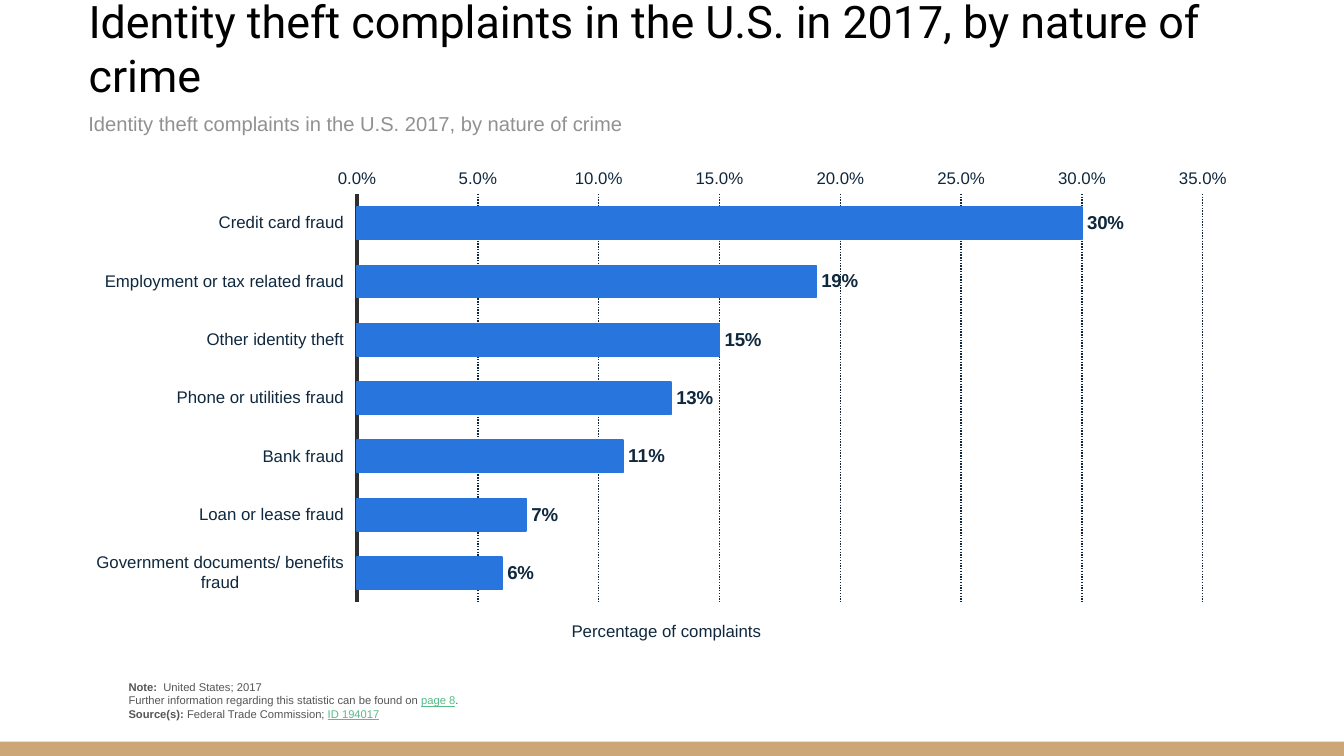
from dataclasses import dataclass

from lxml import etree
from pptx import Presentation
from pptx import util as u
from pptx.chart.data import CategoryChartData
from pptx.dml.color import RGBColor
from pptx.enum import chart as ch, dml, shapes, text


@dataclass(frozen=True)
class Theme:
    head_font: str = "Roboto"
    body_font: str = "Arial"
    black: str = "000000"
    grey: str = "919191"
    note: str = "555555"
    link: str = "57BB8A"
    navy: str = "0F283E"
    axis: str = "2F2F2F"
    bar: str = "2875DD"
    band: str = "CCA677"
    title_pt: float = 24
    subtitle_pt: float = 10.8
    label_pt: float = 10
    axis_pt: float = 9
    note_pt: float = 6


def set_font(font, color, **values):
    for name, value in values.items():
        setattr(font, name, value)
    font.color.rgb = RGBColor.from_string(color)


def set_layout(parent, before, **fractions):
    """Place a chart part by fractions of the chart area."""
    for old in parent.findall("{*}layout"):
        parent.remove(old)
    ns = etree.QName(parent).namespace
    layout = etree.Element(f"{{{ns}}}layout")
    manual = etree.SubElement(layout, f"{{{ns}}}manualLayout")
    for tag, value in fractions.items():
        etree.SubElement(manual, f"{{{ns}}}{tag}").set("val", str(value))
    anchor = next(el for el in parent if etree.QName(el).localname in before)
    anchor.addprevious(layout)


class Deck:
    def __init__(self, theme, width, height):
        self.t = theme
        self.prs = Presentation()
        self.prs.slide_width, self.prs.slide_height = u.Cm(width), u.Cm(height)
        self.s = self.prs.slides.add_slide(self.prs.slide_layouts[5])

    def band(self, box):
        sp = self.s.shapes.add_shape(shapes.MSO_SHAPE.RECTANGLE, *map(u.Cm, box))
        sp.shadow.inherit = False
        sp.fill.solid()
        sp.fill.fore_color.rgb = RGBColor.from_string(self.t.band)
        sp.line.fill.background()

    def fill_text(self, sp, paragraphs, anchor, spacing=1.0, **font):
        """Each paragraph is a list of (text, format changes) pairs."""
        tf = sp.text_frame
        frame = {"word_wrap": True, "auto_size": text.MSO_AUTO_SIZE.NONE,
                 "vertical_anchor": anchor}
        for name, value in frame.items():
            setattr(tf, name, value)
        for i, runs in enumerate(paragraphs):
            p = tf.add_paragraph() if i else tf.paragraphs[0]
            p.alignment, p.line_spacing = text.PP_ALIGN.LEFT, spacing
            for words, changes in runs:
                r = p.add_run()
                r.text = words
                set_font(r.font, **{**font, **changes})

    def title(self, box, words):
        sp = self.s.shapes.title
        sp.left, sp.top, sp.width, sp.height = map(u.Cm, box)
        self.fill_text(sp, [[(words, {})]], text.MSO_ANCHOR.BOTTOM,
                       name=self.t.head_font, size=u.Pt(self.t.title_pt),
                       color=self.t.black)

    def text(self, box, paragraphs, size, color, anchor=text.MSO_ANCHOR.TOP,
             spacing=1.0):
        sp = self.s.shapes.add_textbox(*map(u.Cm, box))
        self.fill_text(sp, paragraphs, anchor, spacing, name=self.t.body_font,
                       size=u.Pt(size), color=color)

    def bar_chart(self, box, name, values):
        t = self.t
        data = CategoryChartData(number_format="0%")
        data.categories = list(values)
        data.add_series(name, list(values.values()))
        chart = self.s.shapes.add_chart(
            ch.XL_CHART_TYPE.BAR_CLUSTERED, *map(u.Cm, box), data).chart
        chart.has_title = chart.has_legend = False
        axis_font = {"name": t.body_font, "size": u.Pt(t.axis_pt),
                     "bold": False, "color": t.navy}
        set_font(chart.font, **axis_font)

        # Bars and their labels
        plot = chart.plots[0]
        plot.gap_width, plot.overlap, plot.vary_by_categories = 80, -10, False
        fmt = plot.series[0].format
        fmt.fill.solid()
        for color in (fmt.fill.fore_color, fmt.line.color):
            color.rgb = RGBColor.from_string(t.bar)
        fmt.line.width = u.Pt(0.75)
        plot.has_data_labels = True
        labels = plot.data_labels
        label_format = {"show_value": True, "number_format": "0%",
                        "number_format_is_linked": False,
                        "position": ch.XL_LABEL_POSITION.OUTSIDE_END}
        for key, value in label_format.items():
            setattr(labels, key, value)
        set_font(labels.font, **{**axis_font, "size": u.Pt(t.label_pt), "bold": True})

        # Axes
        cat, val = chart.category_axis, chart.value_axis
        for axis in (cat, val):
            axis.major_tick_mark = axis.minor_tick_mark = ch.XL_TICK_MARK.NONE
            set_font(axis.tick_labels.font, **axis_font)
        cat.reverse_order = True
        cat.tick_label_position = ch.XL_TICK_LABEL_POSITION.LOW
        cat.format.line.color.rgb = RGBColor.from_string(t.axis)
        cat.format.line.width = u.Pt(2)
        val.minimum_scale, val.maximum_scale, val.major_unit = 0, 0.35, 0.05
        val.tick_labels.number_format = "#,##0.0%"
        val.tick_labels.number_format_is_linked = False
        val.format.line.fill.background()
        grid = val.major_gridlines.format.line
        grid.color.rgb = RGBColor.from_string(t.navy)
        grid.width, grid.dash_style = u.Pt(0.75), dml.MSO_LINE.ROUND_DOT

        # Axis title below the plot
        r = val.axis_title.text_frame.paragraphs[0].add_run()
        r.text = name
        set_font(r.font, **axis_font)
        title = val.axis_title._element
        set_layout(title, ("overlay", "spPr", "txPr"),
                   xMode="edge", yMode="edge", x=0.42, y=0.91)
        set_layout(chart._chartSpace.chart.plotArea, ("barChart",),
                   layoutTarget="inner", xMode="edge", yMode="edge",
                   x=0.24, y=0.07, w=0.72, h=0.81)


def main():
    t = Theme()
    deck = Deck(t, 25.4, 14.29)

    # Footer band
    deck.band((0, 14.02, 25.4, 0.27))

    # Heading
    deck.title((1.42, 0.83, 22.56, 1.22),
               "Identity theft complaints in the U.S. in 2017, by nature of crime")
    deck.text((1.42, 2.04, 22.56, 0.69),
              [[("Identity theft complaints in the U.S. 2017, by nature of crime", {})]],
              t.subtitle_pt, t.grey, spacing=0.9)

    # Notes
    bold, link = {"bold": True}, {"color": t.link, "underline": True}
    deck.text((2.18, 12.47, 17.25, 1.27), [
        [("Note: ", bold), (" United States; 2017", {})],
        [("Further information regarding this statistic can be found on ", {}),
         ("page 8", link), (".", {})],
        [("Source(s): ", bold), ("Federal Trade Commission; ", {}),
         ("ID 194017", link)],
    ], t.note_pt, t.note, text.MSO_ANCHOR.BOTTOM)

    # Chart
    deck.bar_chart((1.42, 3, 22.2, 9.53), "Percentage of complaints", {
        "Credit card fraud": 0.3,
        "Employment or tax related fraud": 0.19,
        "Other identity theft": 0.15,
        "Phone or utilities fraud": 0.13,
        "Bank fraud": 0.11,
        "Loan or lease fraud": 0.07,
        "Government documents/ benefits fraud": 0.06,
    })
    deck.prs.save("out.pptx")


if __name__ == "__main__":
    main()
